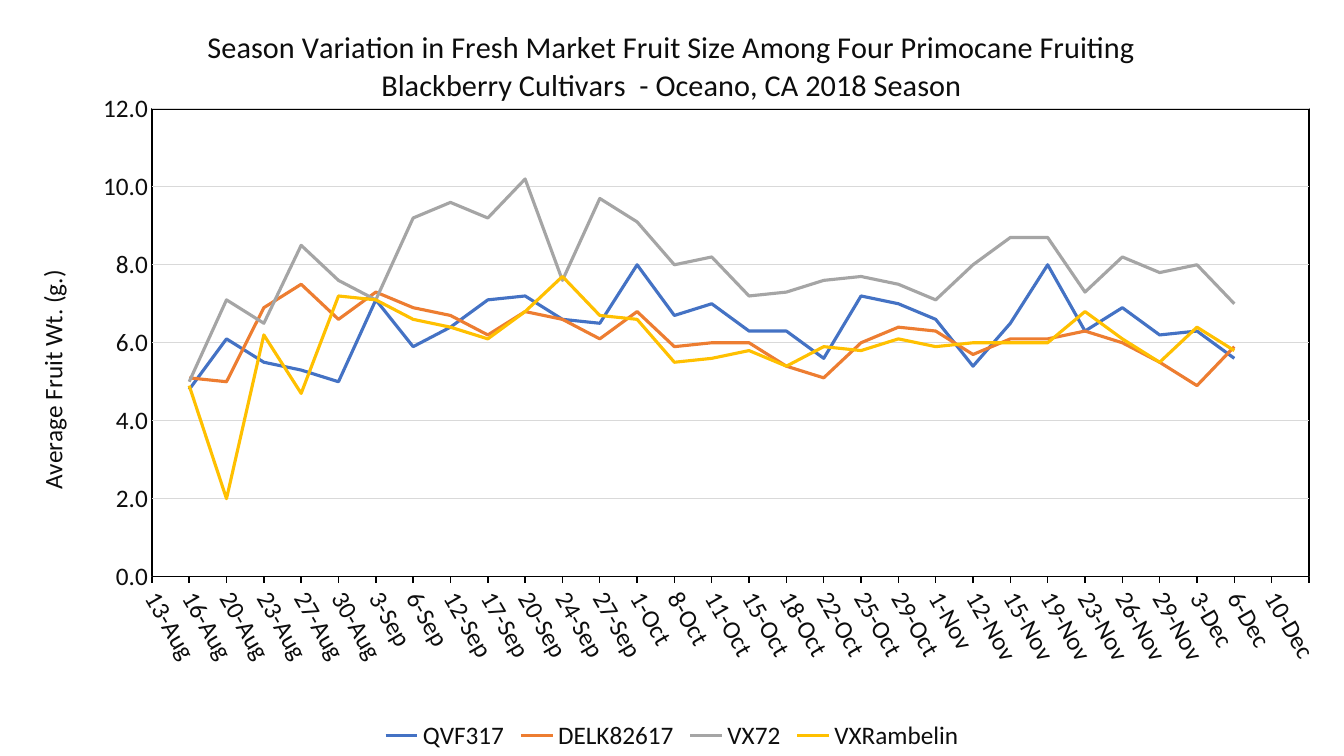
from pptx import Presentation
from pptx.chart.data import CategoryChartData
from pptx.dml.color import RGBColor
from pptx.enum.chart import XL_CHART_TYPE, XL_LEGEND_POSITION, XL_TICK_MARK
from pptx.oxml import parse_xml
from pptx.oxml.ns import nsdecls, qn
from pptx.util import Inches, Pt

TEXT = RGBColor(0x0D, 0x0D, 0x0D)
FRAME = RGBColor(0x00, 0x00, 0x00)
GRID = RGBColor(0xD9, 0xD9, 0xD9)
FONT = "Calibri"

TITLE = ("Season Variation in Fresh Market Fruit Size Among Four Primocane Fruiting "
         "Blackberry Cultivars  - Oceano, CA 2018 Season")
HARVESTS = (("Aug", (13, 16, 20, 23, 27, 30)),
            ("Sep", (3, 6, 12, 17, 20, 24, 27)),
            ("Oct", (1, 8, 11, 15, 18, 22, 25, 29)),
            ("Nov", (1, 12, 15, 19, 23, 26, 29)),
            ("Dec", (3, 6, 10)))
CULTIVARS = (
    ("QVF317", RGBColor(0x44, 0x72, 0xC4),
     (4.8, 6.1, 5.5, 5.3, 5, 7.1, 5.9, 6.4, 7.1, 7.2, 6.6, 6.5, 8, 6.7, 7, 6.3, 6.3, 5.6,
      7.2, 7, 6.6, 5.4, 6.5, 8, 6.3, 6.9, 6.2, 6.3, 5.6)),
    ("DELK82617", RGBColor(0xED, 0x7D, 0x31),
     (5.1, 5, 6.9, 7.5, 6.6, 7.3, 6.9, 6.7, 6.2, 6.8, 6.6, 6.1, 6.8, 5.9, 6, 6, 5.4, 5.1,
      6, 6.4, 6.3, 5.7, 6.1, 6.1, 6.3, 6, 5.5, 4.9, 5.9)),
    ("VX72", RGBColor(0xA5, 0xA5, 0xA5),
     (5, 7.1, 6.5, 8.5, 7.6, 7.1, 9.2, 9.6, 9.2, 10.2, 7.6, 9.7, 9.1, 8, 8.2, 7.2, 7.3, 7.6,
      7.7, 7.5, 7.1, 8, 8.7, 8.7, 7.3, 8.2, 7.8, 8, 7)),
    ("VXRambelin", RGBColor(0xFF, 0xC0, 0x00),
     (4.9, 2, 6.2, 4.7, 7.2, 7.1, 6.6, 6.4, 6.1, 6.8, 7.7, 6.7, 6.6, 5.5, 5.6, 5.8, 5.4, 5.9,
      5.8, 6.1, 5.9, 6, 6, 6, 6.8, 6.1, 5.5, 6.4, 5.8)),
)


def style_font(font, size):
    """Give a chart font the common face and colour."""
    font.name, font.size, font.bold = FONT, Pt(size), False
    font.color.rgb = TEXT


def write_title(title, text, size):
    """Fill a chart or axis title."""
    para = title.text_frame.paragraphs[0]
    para.text = text
    style_font(para.font, size)


def fruit_data():
    """Line up the weights with the harvest dates."""
    data = CategoryChartData(number_format="0.0")
    data.categories = [f"{day}-{month}" for month, days in HARVESTS for day in days] + [""]
    for name, _, weights in CULTIVARS:
        data.add_series(name, (None, *weights, None, None))
    return data


def frame_plot(chart, left, top, width, height):
    """Place the inner plot by fractions of the chart and outline it."""
    area = chart._chartSpace.find(".//" + qn("c:plotArea"))
    for layout in area.findall(qn("c:layout")):
        area.remove(layout)
    area.insert(0, parse_xml(
        f'<c:layout {nsdecls("c")}><c:manualLayout><c:layoutTarget val="inner"/>'
        '<c:xMode val="edge"/><c:yMode val="edge"/>'
        f'<c:x val="{left}"/><c:y val="{top}"/><c:w val="{width}"/><c:h val="{height}"/>'
        '</c:manualLayout></c:layout>'))
    area.append(parse_xml(
        f'<c:spPr {nsdecls("c", "a")}><a:noFill/><a:ln w="{Pt(1)}"><a:solidFill>'
        f'<a:srgbClr val="{FRAME}"/></a:solidFill></a:ln></c:spPr>'))


def style_date_axis(axis):
    """Slant the dates below a black axis."""
    axis.major_tick_mark = XL_TICK_MARK.OUTSIDE
    axis.format.line.color.rgb = FRAME
    axis.format.line.width = Pt(1)
    style_font(axis.tick_labels.font, 18)
    axis._element.find(".//" + qn("a:bodyPr")).set("rot", str(60 * 60000))


def style_weight_axis(axis):
    """Scale the weights and start the lines on the tick marks."""
    axis.minimum_scale, axis.maximum_scale, axis.major_unit = 0, 12, 2
    axis.major_tick_mark = XL_TICK_MARK.NONE
    axis.format.line.fill.background()
    axis.major_gridlines.format.line.color.rgb = GRID
    axis.major_gridlines.format.line.width = Pt(0.75)
    axis.tick_labels.number_format = "0.0"
    axis.tick_labels.number_format_is_linked = False
    style_font(axis.tick_labels.font, 18)
    write_title(axis.axis_title, "Average Fruit Wt. (g.)", 18)
    axis.axis_title._element.find(".//" + qn("a:bodyPr")).set("rot", str(-90 * 60000))
    for crossing in axis._element.findall(qn("c:crossBetween")):
        axis._element.remove(crossing)
    axis._element.find(qn("c:crosses")).addnext(
        parse_xml(f'<c:crossBetween {nsdecls("c")} val="midCat"/>'))


def add_fruit_chart(page, left, top, width, height):
    """Draw the fruit size chart in the given box."""
    chart = page.shapes.add_chart(
        XL_CHART_TYPE.LINE, left, top, width, height, fruit_data()).chart
    style_font(chart.font, 18)
    chart.has_title = True
    write_title(chart.chart_title, TITLE, 21.6)
    chart.chart_title.include_in_layout = False
    chart.has_legend = True
    chart.legend.position = XL_LEGEND_POSITION.BOTTOM
    chart.legend.include_in_layout = False
    style_font(chart.legend.font, 18)
    chart.plots[0].vary_by_categories = False
    for series, (_, color, _) in zip(chart.plots[0].series, CULTIVARS):
        series.smooth = False
        series.format.line.color.rgb = color
        series.format.line.width = Pt(2.25)
    style_date_axis(chart.category_axis)
    style_weight_axis(chart.value_axis)
    frame_plot(chart, 0.113, 0.144, 0.861, 0.619)


def main():
    """Build and save the deck."""
    deck = Presentation()
    deck.slide_width, deck.slide_height = Inches(13.33), Inches(7.5)
    page = deck.slides.add_slide(deck.slide_layouts[6])
    add_fruit_chart(page, 0, 0, deck.slide_width, deck.slide_height)
    deck.save("out.pptx")


if __name__ == "__main__":
    main()
